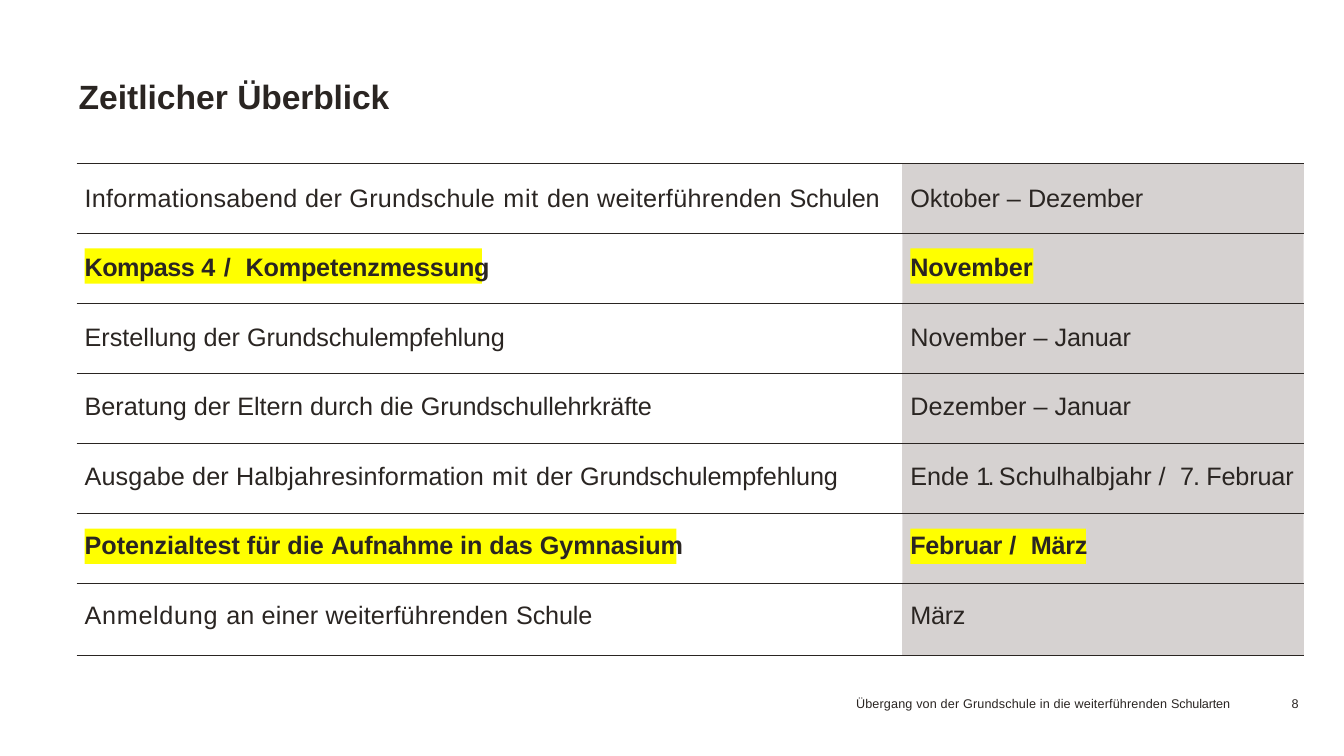
from lxml.etree import SubElement
from pptx import Presentation
from pptx.dml.color import RGBColor
from pptx.enum.shapes import MSO_SHAPE
from pptx.oxml import parse_xml
from pptx.oxml.ns import nsdecls, qn
from pptx.util import Inches, Pt

INK, GREY, YELLOW = "2A2522", "D6D2D1", "FFFF00"

# Texts are lists of (words, letter spacing in points)
TITLE = [("Zeitlicher ", 0), ("Überblick", -0.1)]
FOOTER = [("Übergang von der Grundschule in die weiterführenden ", 0.1), ("Schularten", -0.1)]
PAGE = [("8", -0.5)]

# Topic, date, top margin, widths of the yellow marks (None for a plain row)
ROWS = [
    ([("Informationsabend der Grundschule ", 0.2), ("mit ", 0.6),
      ("den weiterführenden ", 0.2), ("Schulen", -0.1)],
     [("Oktober – ", 0), ("Dezember", -0.1)], 0.21, None),
    ([("Kompass ", -0.4), ("4 ", 0.6), ("/ ", 2.7), ("Kompetenzmessung", -0.1)],
     [("November", -0.1)], 0.2, (3.94, 1.22)),
    ([("Erstellung der ", 0), ("Grundschulempfehlung", -0.1)],
     [("November – ", 0), ("Januar", -0.1)], 0.2, None),
    ([("Beratung der Eltern durch die ", 0), ("Grundschullehrkräfte", -0.1)],
     [("Dezember – ", 0), ("Januar", -0.1)], 0.19, None),
    ([("Ausgabe der Halbjahresinformation ", 0.1), ("mit ", 0.6), ("der ", 0.1),
      ("Grundschulempfehlung", -0.1)],
     [("Ende ", 0), ("1. ", -1.9), ("Schulhalbjahr ", 0), ("/ ", 2.6), ("7. ", -0.6),
      ("Februar", -0.1)], 0.19, None),
    ([("Potenzialtest für die ", 0), ("Aufnahme ", -0.1), ("in das ", 0), ("Gymnasium", -0.1)],
     [("Februar ", -0.2), ("/ ", 2.7), ("März", -0.2)], 0.18, (5.87, 1.74)),
    ([("Anmeldung ", 0.5), ("an einer weiterführenden ", 0.1), ("Schule", -0.1)],
     [("März", -0.2)], 0.18, None),
]

# Table grid
LEFT, TOP, INDENT = 0.76, 1.62, 0.08
COLS = (8.19, 3.98)
HEIGHTS = [0.695] * 6 + [0.71]
COL_X = (LEFT, LEFT + COLS[0])
MARK_H = 0.35


def color(hex_string):
    return RGBColor.from_string(hex_string)


def write(tf, runs, size, bold=False):
    p = tf.paragraphs[0]
    p.font.name, p.font.size, p.font.bold = "Arial", Pt(size), bold
    p.font.color.rgb = color(INK)
    for words, spacing in runs:
        r = p.add_run()
        r.text = words
        r.font.language_id = None
        if spacing:
            r._r.get_or_add_rPr().set("spc", str(round(spacing * 100)))


def add_text(s, x, y, w, h, runs, size, bold=False):
    tf = s.shapes.add_textbox(Inches(x), Inches(y), Inches(w), Inches(h)).text_frame
    tf.word_wrap = False
    tf.margin_left = tf.margin_right = tf.margin_bottom = 0
    tf.margin_top = Inches(0.01)
    write(tf, runs, size, bold)


def add_block(s, x, y, w, h, fill):
    sp = s.shapes.add_shape(MSO_SHAPE.RECTANGLE, Inches(x), Inches(y), Inches(w), Inches(h))
    sp.shadow.inherit = False
    sp.fill.solid()
    sp.fill.fore_color.rgb = color(fill)
    sp.line.fill.background()


def set_borders(cell):
    tcPr = cell._tc.get_or_add_tcPr()
    for i, side in enumerate("LRTB"):
        ln = parse_xml(f'<a:ln{side} {nsdecls("a")} w="6350"/>')
        if side in "LR":
            SubElement(ln, qn("a:noFill"))
        else:
            fill = SubElement(ln, qn("a:solidFill"))
            SubElement(fill, qn("a:srgbClr")).set("val", INK)
        tcPr.insert(i, ln)


def add_schedule(s):
    # Grey date column and yellow marks lie behind the table
    add_block(s, COL_X[1], TOP, COLS[1], sum(HEIGHTS), GREY)
    for i, (*_, marks) in enumerate(ROWS):
        for x, w in zip(COL_X, marks or ()):
            add_block(s, x + INDENT, TOP + sum(HEIGHTS[:i]) + 0.15, w, MARK_H, YELLOW)

    table = s.shapes.add_table(len(ROWS), len(COLS), Inches(LEFT), Inches(TOP),
                               Inches(sum(COLS)), Inches(sum(HEIGHTS))).table
    table.first_row = table.horz_banding = False
    for column, w in zip(table.columns, COLS):
        column.width = Inches(w)
    for i, (topic, date, margin, marks) in enumerate(ROWS):
        table.rows[i].height = Inches(HEIGHTS[i])
        for j, runs in enumerate((topic, date)):
            cell = table.cell(i, j)
            cell.margin_left, cell.margin_top = Inches(INDENT), Inches(margin)
            cell.margin_right = cell.margin_bottom = 0
            if j == 1 and not marks:
                cell.fill.solid()
                cell.fill.fore_color.rgb = color(GREY)
            else:
                cell.fill.background()
            set_borders(cell)
            write(cell.text_frame, runs, 18, bold=bool(marks))


def main():
    prs = Presentation()
    prs.slide_width, prs.slide_height = Inches(13.33), Inches(7.5)
    s = prs.slides.add_slide(prs.slide_layouts[6])
    add_text(s, 0.78, 0.74, 3.13, 0.43, TITLE, 24, bold=True)
    add_schedule(s)
    # Footer and page number
    add_text(s, 8.49, 6.89, 3.78, 0.18, FOOTER, 9)
    add_text(s, 12.81, 6.89, 0.13, 0.18, PAGE, 9)
    prs.save("out.pptx")


if __name__ == "__main__":
    main()
